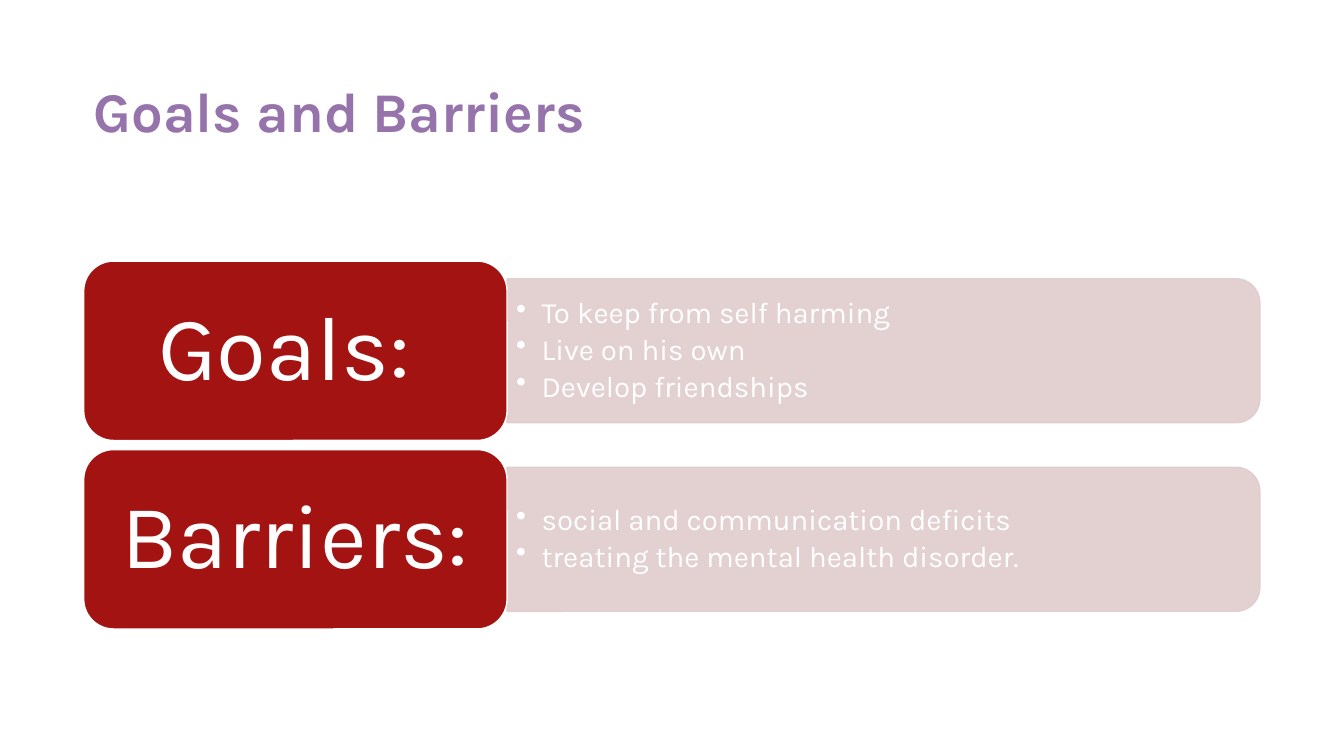
from dataclasses import dataclass

from lxml import etree
from pptx import Presentation
from pptx.dml.color import RGBColor
from pptx.enum.shapes import MSO_SHAPE as Shape
from pptx.enum.text import MSO_ANCHOR as Anchor, PP_ALIGN as Align
from pptx.oxml.ns import qn
from pptx.util import Cm, Pt


@dataclass(frozen=True)
class Theme:
    font: str = "Karla"
    title: RGBColor = RGBColor(0x96, 0x74, 0xAB)
    block: RGBColor = RGBColor(0xA3, 0x13, 0x12)
    panel: RGBColor = RGBColor(0xE0, 0xCC, 0xCC)
    white: RGBColor = RGBColor(0xFF, 0xFF, 0xFF)
    title_size: Pt = Pt(40)
    label_size: Pt = Pt(65)
    bullet_size: Pt = Pt(21)


theme = Theme()

ROWS = [
    ("Goals: ", ["To keep from self harming", "Live on his own", "Develop friendships"]),
    ("Barriers: ", ["social and communication deficits", "treating the mental health disorder."]),
]
LEFT, TOP, ROW_PITCH = 2.11, 6.58, 4.75
BLOCK_WIDTH, BLOCK_HEIGHT = 10.67, 4.52
PANEL_WIDTH, PANEL_HEIGHT = 18.97, 3.63
BULLETS_WIDTH, BULLETS_HEIGHT = 18.8, 3.28


def prepare_frame(shape, horizontal, vertical):
    """Wrap and middle-anchor the text, with the given insets in centimetres."""
    frame = shape.text_frame
    frame.word_wrap = True
    frame.vertical_anchor = Anchor.MIDDLE
    frame.margin_left = frame.margin_right = Cm(horizontal)
    frame.margin_top = frame.margin_bottom = Cm(vertical)
    return frame


def style_paragraph(paragraph, size, color, bold=False):
    paragraph.line_spacing = 0.9
    paragraph.font.name = theme.font
    paragraph.font.size = size
    paragraph.font.bold = bold
    paragraph.font.color.rgb = color


presentation = Presentation()
presentation.slide_width, presentation.slide_height = Cm(33.87), Cm(19.05)
slide = presentation.slides.add_slide(presentation.slide_layouts[6])

title = slide.shapes.add_textbox(Cm(LEFT), Cm(1.98), Cm(29.41), Cm(1.8))
title_paragraph = prepare_frame(title, 0.25, 0.13).paragraphs[0]
title_paragraph.text = "Goals and Barriers"
style_paragraph(title_paragraph, theme.title_size, theme.title, bold=True)

panel_left = LEFT + BLOCK_WIDTH
for index, (label, bullets) in enumerate(ROWS):
    top = TOP + index * ROW_PITCH
    middle = top + BLOCK_HEIGHT / 2

    # The panel is upright before its quarter turn
    panel = slide.shapes.add_shape(
        Shape.ROUND_2_SAME_RECTANGLE,
        Cm(panel_left + (PANEL_WIDTH - PANEL_HEIGHT) / 2), Cm(middle - PANEL_WIDTH / 2),
        Cm(PANEL_HEIGHT), Cm(PANEL_WIDTH))
    panel.rotation = 90
    panel.shadow.inherit = False
    panel.fill.solid()
    panel.fill.fore_color.rgb = theme.panel
    panel.line.color.rgb = theme.panel
    panel.line.width = Pt(1)
    for color in panel._element.spPr.iter(qn("a:srgbClr")):
        etree.SubElement(color, qn("a:alpha"), val="90000")

    bullet_box = slide.shapes.add_textbox(
        Cm(panel_left), Cm(middle - BULLETS_HEIGHT / 2), Cm(BULLETS_WIDTH), Cm(BULLETS_HEIGHT))
    frame = prepare_frame(bullet_box, 0.23, 0.1)
    for number, bullet in enumerate(bullets):
        paragraph = frame.add_paragraph() if number else frame.paragraphs[0]
        paragraph.text = bullet
        properties = paragraph._p.get_or_add_pPr()
        properties.set("marL", str(Cm(0.64)))
        properties.set("indent", str(Cm(-0.64)))
        etree.SubElement(properties, qn("a:buChar"), char="•")
        paragraph.space_after = Pt(3.6)
        style_paragraph(paragraph, theme.bullet_size, theme.white)

    block = slide.shapes.add_shape(
        Shape.ROUNDED_RECTANGLE, Cm(LEFT), Cm(top), Cm(BLOCK_WIDTH), Cm(BLOCK_HEIGHT))
    block.shadow.inherit = False
    block.fill.solid()
    block.fill.fore_color.rgb = theme.block
    block.line.color.rgb = theme.white
    block.line.width = Pt(1)
    label_paragraph = prepare_frame(block, 0.69, 0.36).paragraphs[0]
    label_paragraph.text = label
    label_paragraph.alignment = Align.CENTER
    style_paragraph(label_paragraph, theme.label_size, theme.white)

presentation.save("out.pptx")
